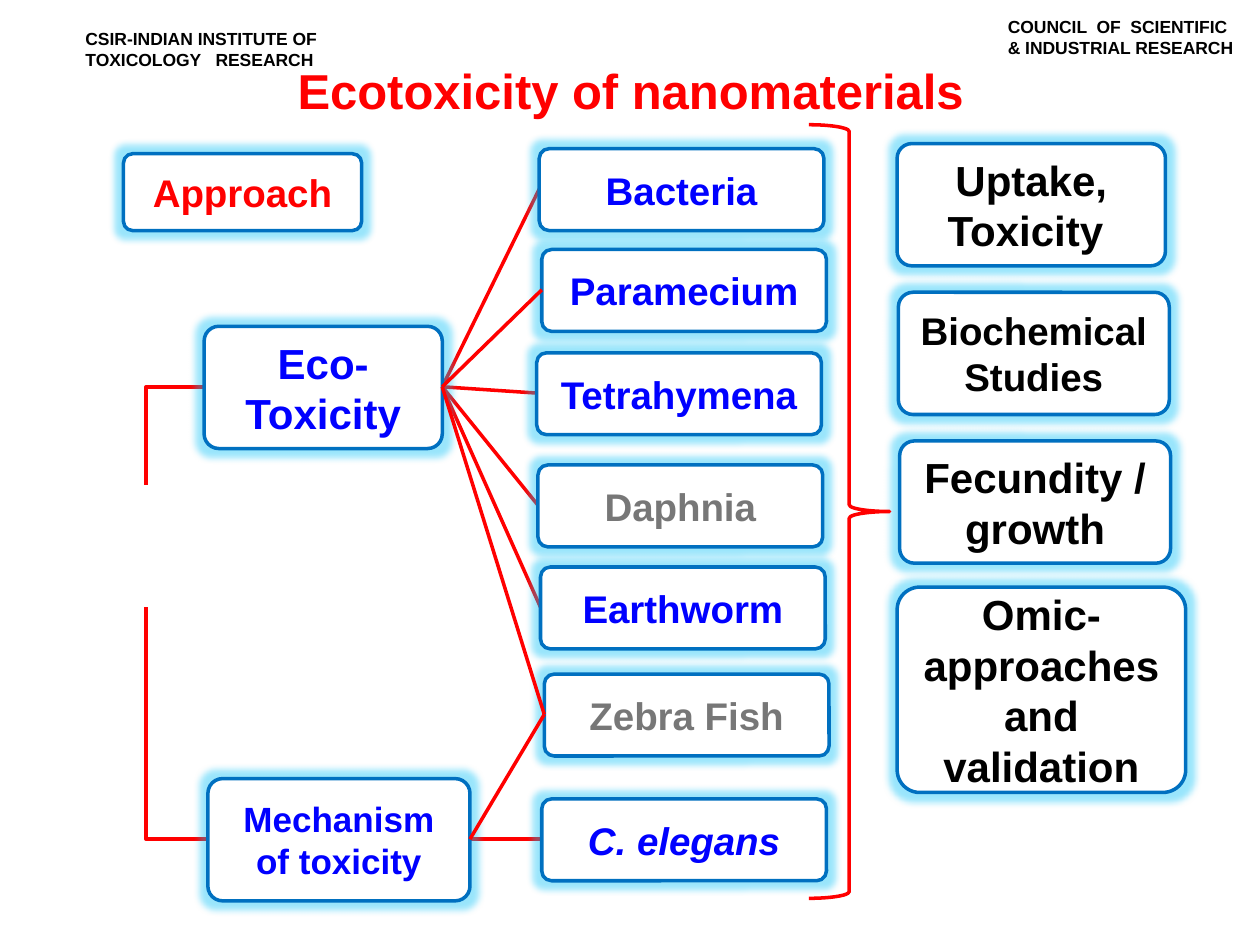
from dataclasses import dataclass

from lxml.etree import SubElement
from pptx import Presentation
from pptx.dml.color import RGBColor
from pptx.enum.shapes import MSO_CONNECTOR as Link, MSO_SHAPE as Shape
from pptx.enum.text import MSO_ANCHOR as Anchor, PP_ALIGN as Align
from pptx.oxml.ns import qn
from pptx.util import Emu, Pt

PX = 914400 // 100
COLORS = {"red": "FF0000", "blue": "0000FF", "grey": "777777", "black": "000000",
          "white": "FFFFFF", "outline": "0070C0", "glow": "00C0F8"}


@dataclass(frozen=True)
class Box:
    text: str
    left: int
    top: int
    width: int
    height: int
    size: int = 22
    color: str = "blue"
    italic: bool = False
    corner: float = 0.12

    @property
    def west(self) -> tuple[int, int]:
        return self.left, self.top + self.height // 2

    @property
    def east(self) -> tuple[int, int]:
        return self.left + self.width, self.top + self.height // 2


@dataclass(frozen=True)
class Heading:
    text: str
    left: int
    top: int
    width: int
    height: int
    size: int = 10
    color: str = "black"
    align: Align = Align.LEFT


def organism(text: str, left: int, top: int, color: str = "blue", italic: bool = False) -> Box:
    return Box(text, left, top, 226, 65, color=color, italic=italic)


HEADINGS = [
    Heading("CSIR-INDIAN INSTITUTE OF\nTOXICOLOGY   RESEARCH", 58, 17, 206, 44),
    Heading("COUNCIL  OF  SCIENTIFIC\n& INDUSTRIAL RESEARCH", 790, 8, 202, 44),
    Heading("Ecotoxicity of nanomaterials", 212, 43, 577, 57, 28, "red", Align.CENTER),
]
APPROACH = Box("Approach", 98, 122, 189, 61, color="red")
ECOTOXICITY = Box("Eco- Toxicity", 162, 259, 189, 97, 24)
MECHANISM = Box("Mechanism of toxicity", 165, 618, 208, 97, 20)
BACTERIA = organism("Bacteria", 428, 118)
PARAMECIUM = organism("Paramecium", 430, 198)
TETRAHYMENA = organism("Tetrahymena", 426, 280)
DAPHNIA = organism("Daphnia", 427, 369, "grey")
EARTHWORM = organism("Earthworm", 429, 450)
ZEBRA_FISH = organism("Zebra Fish", 432, 535, "grey")
ELEGANS = organism("C. elegans", 430, 634, italic=True)
STUDIES = [
    Box("Uptake,\nToxicity ", 712, 114, 213, 97, 24, "black"),
    Box("Omic-approaches and validation", 712, 466, 229, 163, 24, "black", corner=0.11),
    Box("Fecundity / growth", 714, 350, 215, 97, 24, "black"),
    Box("Biochemical Studies", 713, 232, 215, 97, 22, "black"),
]


def rgb(name: str) -> RGBColor:
    return RGBColor.from_string(COLORS[name])


def px(*lengths: int) -> list[Emu]:
    return [Emu(length * PX) for length in lengths]


def stroke(line, color: str) -> None:
    line.color.rgb = rgb(color)
    line.width = Pt(2)


def write(frame, item: Box | Heading, align: Align, italic: bool = False) -> None:
    frame.text = item.text
    for paragraph in frame.paragraphs:
        paragraph.alignment = align
        font = paragraph.font
        font.name, font.size = "Arial", Pt(item.size)
        font.bold, font.italic = True, italic
        font.color.rgb = rgb(item.color)


def draw_heading(shapes, heading: Heading) -> None:
    area = px(heading.left, heading.top, heading.width, heading.height)
    frame = shapes.add_textbox(*area).text_frame
    frame.word_wrap = False
    write(frame, heading, heading.align)


def draw_box(shapes, box: Box) -> None:
    area = px(box.left, box.top, box.width, box.height)
    card = shapes.add_shape(Shape.ROUNDED_RECTANGLE, *area)
    card.adjustments[0] = box.corner
    card.fill.solid()
    card.fill.fore_color.rgb = rgb("white")
    stroke(card.line, "outline")
    card.shadow.inherit = False
    effects = card._element.spPr.find(qn("a:effectLst"))
    glow = SubElement(effects, qn("a:glow"), rad=str(Pt(8)))
    tint = SubElement(glow, qn("a:srgbClr"), val=COLORS["glow"])
    SubElement(tint, qn("a:alpha"), val="40000")
    card.text_frame.word_wrap = True
    card.text_frame.vertical_anchor = Anchor.MIDDLE
    write(card.text_frame, box, Align.CENTER, box.italic)


def draw_link(shapes, start: tuple[int, int], end: tuple[int, int], bent: bool = False) -> None:
    link = shapes.add_connector(Link.ELBOW if bent else Link.STRAIGHT, *px(*start, *end))
    stroke(link.line, "red")
    properties = link._element.spPr
    SubElement(properties, qn("a:effectLst"))
    if bent:
        properties.find(qn("a:prstGeom")).set("prst", "bentConnector2")


def draw_brace(shapes) -> None:
    brace = shapes.add_shape(Shape.RIGHT_BRACE, *px(642, 99, 64, 614))
    brace.fill.background()
    stroke(brace.line, "red")
    brace.shadow.inherit = False


def main() -> None:
    """Build the ecotoxicity approach slide."""
    deck = Presentation()
    deck.slide_width, deck.slide_height = px(1000, 750)
    shapes = deck.slides.add_slide(deck.slide_layouts[6]).shapes

    for heading in HEADINGS:
        draw_heading(shapes, heading)
    draw_link(shapes, MECHANISM.east, ELEGANS.west)
    for target in (BACTERIA, DAPHNIA, EARTHWORM, TETRAHYMENA):
        draw_link(shapes, ECOTOXICITY.east, target.west)
    draw_link(shapes, ECOTOXICITY.west, (116, 385), bent=True)
    draw_link(shapes, MECHANISM.west, (116, 482), bent=True)

    for box in (ECOTOXICITY, MECHANISM, BACTERIA, DAPHNIA, EARTHWORM, TETRAHYMENA,
                ELEGANS, *STUDIES, APPROACH):
        draw_box(shapes, box)
    draw_brace(shapes)
    for box in (PARAMECIUM, ZEBRA_FISH):
        draw_box(shapes, box)
        draw_link(shapes, ECOTOXICITY.east, box.west)
    draw_link(shapes, MECHANISM.east, ZEBRA_FISH.west)
    deck.save("out.pptx")


if __name__ == "__main__":
    main()
